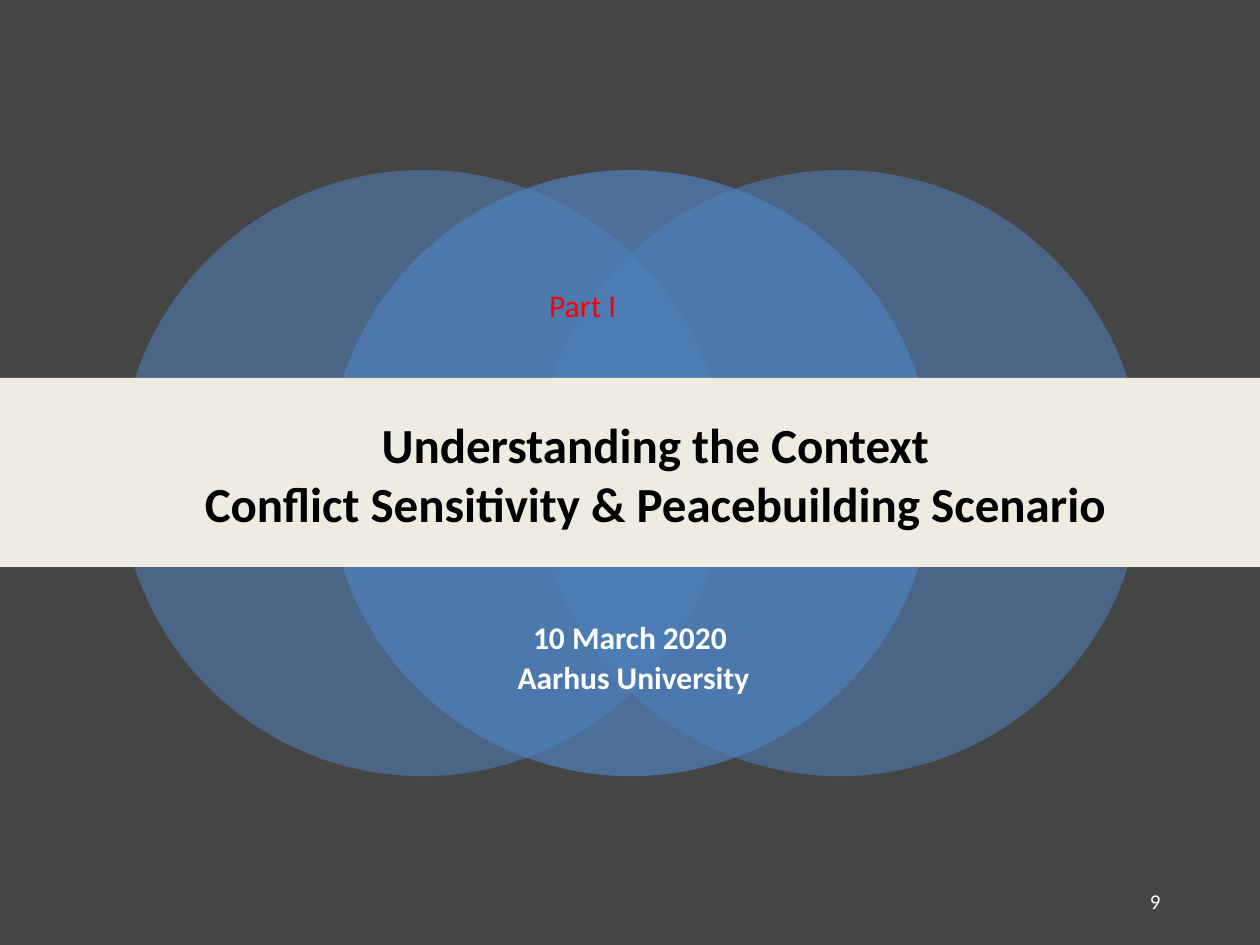
import pptx
from lxml import etree
from pptx.dml.color import RGBColor
from pptx.enum.shapes import MSO_SHAPE
from pptx.enum.text import MSO_ANCHOR, MSO_AUTO_SIZE, PP_ALIGN
from pptx.oxml.ns import qn
from pptx.util import Inches, Pt

COLORS = {
    "background": "454545",
    "circle": "4F81BD",
    "band": "EEECE1",
    "title": "000000",
    "part": "FF0000",
    "light": "FFFFFF",
}


def fill_shape(shape, color, opacity=100):
    """Give a borderless, shadowless fill; opacity is in percent."""
    shape.shadow.inherit = False
    shape.line.fill.background()
    shape.fill.solid()
    shape.fill.fore_color.rgb = RGBColor.from_string(COLORS[color])
    if opacity < 100:
        color_node = shape.fill._xPr.find(".//" + qn("a:srgbClr"))
        etree.SubElement(color_node, qn("a:alpha"), val=str(opacity * 1000))


def write_text(box, area, lines, size, color, bold=False,
               align=PP_ALIGN.CENTER, anchor=MSO_ANCHOR.TOP):
    """Place a box and write one paragraph per line."""
    box.left, box.top, box.width, box.height = map(Inches, area)
    frame = box.text_frame
    frame.word_wrap = True
    frame.auto_size = MSO_AUTO_SIZE.NONE
    frame.vertical_anchor = anchor
    frame.text = "\n".join(lines)
    for para in frame.paragraphs:
        para.alignment = align
        para.font.name = "Calibri"
        para.font.size = Pt(size)
        para.font.bold = bold
        para.font.color.rgb = RGBColor.from_string(COLORS[color])


deck = pptx.Presentation()
deck.slide_width, deck.slide_height = Inches(10), Inches(7.5)
page = deck.slides.add_slide(deck.slide_layouts[0])
page.background.fill.solid()
page.background.fill.fore_color.rgb = RGBColor.from_string(COLORS["background"])
title, date = page.placeholders[0], page.placeholders[1]

# Overlapping circles, the middle one in front
circles = page.shapes.add_group_shape()
for left, opacity in ((0.95, 55), (4.26, 55), (2.6, 70)):
    circle = circles.shapes.add_shape(
        MSO_SHAPE.OVAL, Inches(left), Inches(1.35), Inches(4.81), Inches(4.81))
    fill_shape(circle, "circle", opacity)

# Date and place, brought in front of the circles
write_text(date, (1.25, 4.62, 7.5, 0.96), ["10 March 2020", " Aarhus University"],
           18, "light", bold=True, anchor=MSO_ANCHOR.BOTTOM)
for para in date.text_frame.paragraphs:
    para.line_spacing = 0.9
    para.space_before = Pt(3.6)
circles.element.addnext(date.element)

band = page.shapes.add_shape(
    MSO_SHAPE.RECTANGLE, 0, Inches(3), deck.slide_width, Inches(1.5))
fill_shape(band, "band")

number = page.shapes.add_textbox(0, 0, 0, 0)
write_text(number, (7.06, 6.95, 2.25, 0.4), ["9"], 12, "light",
           align=PP_ALIGN.RIGHT, anchor=MSO_ANCHOR.MIDDLE)
number.text_frame.paragraphs[0].space_after = Pt(6)

part = page.shapes.add_textbox(0, 0, 0, 0)
write_text(part, (4.26, 2.22, 1.49, 0.4), ["Part I"], 18, "part",
           align=PP_ALIGN.LEFT)

# Title, brought in front of the band
write_text(title, (0.53, 3.24, 9.34, 1.04),
           ["Understanding the Context",
            "Conflict Sensitivity & Peacebuilding Scenario"],
           28, "title", bold=True)
part.element.addnext(title.element)

deck.save("out.pptx")
